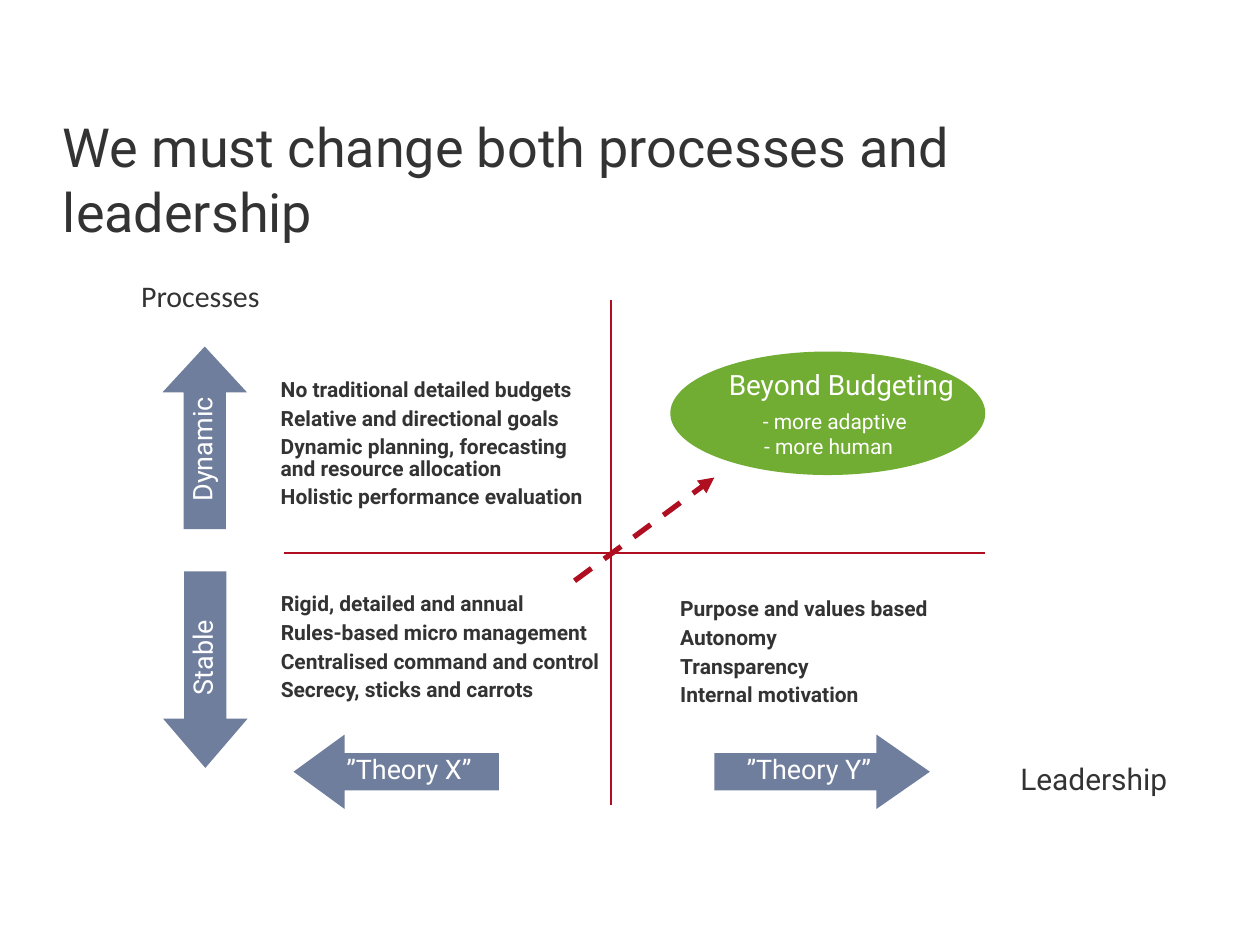
from lxml import etree
from pptx import Presentation
from pptx.dml.color import RGBColor
from pptx.enum.dml import MSO_LINE
from pptx.enum.shapes import MSO_CONNECTOR, MSO_SHAPE
from pptx.enum.text import MSO_ANCHOR, PP_ALIGN
from pptx.oxml.ns import qn
from pptx.util import Inches, Pt

TEXT = "333333"
WHITE = "FFFFFF"
RED = "AF0F20"
BLUE = "707E9E"
GREEN = "71AC33"

DYNAMIC_POINTS = [
    "No traditional detailed budgets",
    "Relative and directional goals",
    "Dynamic planning, forecasting and resource allocation",
    "Holistic performance evaluation",
]
STABLE_POINTS = [
    "Rigid, detailed and annual",
    "Rules-based micro management",
    "Centralised command and control",
    "Secrecy, sticks and carrots",
]
THEORY_Y_POINTS = [
    "Purpose and values based",
    "Autonomy",
    "Transparency",
    "Internal motivation",
]


def color(value):
    return RGBColor.from_string(value)


def set_margins(frame, left, top, right, bottom):
    frame.margin_left, frame.margin_top = Inches(left), Inches(top)
    frame.margin_right, frame.margin_bottom = Inches(right), Inches(bottom)


def add_run(paragraph, text, size, text_color=TEXT, font="Roboto", bold=False):
    run = paragraph.add_run()
    run.text = text
    run.font.size = Pt(size)
    run.font.name = font
    run.font.bold = bold
    run.font.color.rgb = color(text_color)


def add_text_box(slide, left, top, width, height, wrap=True):
    box = slide.shapes.add_textbox(
        Inches(left), Inches(top), Inches(width), Inches(height))
    box.text_frame.word_wrap = wrap
    return box.text_frame


def add_points(slide, left, top, width, height, points):
    frame = add_text_box(slide, left, top, width, height)
    for index, point in enumerate(points):
        paragraph = frame.add_paragraph() if index else frame.paragraphs[0]
        paragraph.line_spacing = Pt(12.2)
        paragraph.space_before = Pt(4.2 if index else 0)
        add_run(paragraph, point, 12, bold=True)


def add_filled_shape(slide, kind, left, top, width, height, fill):
    shape = slide.shapes.add_shape(
        kind, Inches(left), Inches(top), Inches(width), Inches(height))
    shape.shadow.inherit = False
    shape.fill.solid()
    shape.fill.fore_color.rgb = color(fill)
    shape.line.fill.background()
    shape.text_frame.word_wrap = False
    shape.text_frame.vertical_anchor = MSO_ANCHOR.MIDDLE
    return shape


def add_block_arrow(slide, kind, left, top, width, height, head, label, rotation=0):
    arrow = add_filled_shape(slide, kind, left, top, width, height, BLUE)
    arrow.adjustments[0] = 0.5
    arrow.adjustments[1] = head
    arrow.rotation = rotation
    set_margins(arrow.text_frame, 0.1, 0, 0.1, 0.05)
    paragraph = arrow.text_frame.paragraphs[0]
    paragraph.alignment = PP_ALIGN.CENTER
    add_run(paragraph, label, 15.4, WHITE)


def add_line(slide, x1, y1, x2, y2, width=1.5):
    line = slide.shapes.add_connector(
        MSO_CONNECTOR.STRAIGHT, Inches(x1), Inches(y1), Inches(x2), Inches(y2))
    line.line.color.rgb = color(RED)
    line.line.width = Pt(width)
    etree.SubElement(line._element.spPr, qn("a:effectLst"))
    return line


def add_dashed_arrow(slide, x1, y1, x2, y2):
    arrow = add_line(slide, x1, y1, x2, y2, width=3)
    arrow.line.dash_style = MSO_LINE.DASH
    etree.SubElement(arrow.line._get_or_add_ln(), qn("a:tailEnd"), type="triangle")


def add_goal_ellipse(slide):
    ellipse = add_filled_shape(slide, MSO_SHAPE.OVAL, 5.32, 2.79, 2.5, 0.98, GREEN)
    frame = ellipse.text_frame
    lines = [
        ("Beyond Budgeting", 16, 0, 0),
        ("- more adaptive", 12, 0.27, 4),
        ("- more human", 12, 0.28, 0),
    ]
    for index, (text, size, indent, space) in enumerate(lines):
        paragraph = frame.add_paragraph() if index else frame.paragraphs[0]
        paragraph.alignment = PP_ALIGN.LEFT
        paragraph.space_before = Pt(space)
        paragraph._p.get_or_add_pPr().set("marL", str(Inches(indent)))
        add_run(paragraph, text, size, WHITE)


def main():
    presentation = Presentation()
    presentation.slide_width = Inches(10)
    presentation.slide_height = Inches(7.5)
    slide = presentation.slides.add_slide(presentation.slide_layouts[6])

    # Title
    title = add_text_box(slide, 0.5, 0.62, 9, 1.11)
    set_margins(title, 0, 0.28, 0, 0.16)
    add_run(title.paragraphs[0], "We must change both processes and leadership", 30.8)

    # Process arrows, turned to point down and up
    add_block_arrow(slide, MSO_SHAPE.LEFT_ARROW, 0.85, 4.98, 1.56, 0.67,
                    0.584, "Stable", 270)
    add_block_arrow(slide, MSO_SHAPE.RIGHT_ARROW, 0.9, 3.14, 1.45, 0.67,
                    0.542, "Dynamic", 270)

    # Axes and their names
    add_line(slide, 2.25, 4.39, 7.82, 4.39)
    add_line(slide, 4.85, 2.38, 4.85, 6.39)
    leadership = add_text_box(slide, 8, 5.99, 1.39, 0.39, wrap=False)
    add_run(leadership.paragraphs[0], "Leadership", 17.1)
    processes = add_text_box(slide, 0.27, 2.22, 2.64, 0.32).paragraphs[0]
    processes.alignment = PP_ALIGN.CENTER
    processes.line_spacing = Pt(16)
    add_run(processes, "Processes", 17.1, font="Calibri")

    # Goal and the leadership arrows
    add_goal_ellipse(slide)
    add_block_arrow(slide, MSO_SHAPE.LEFT_ARROW, 2.33, 5.83, 1.63, 0.59,
                    0.687, "”Theory X”")
    add_block_arrow(slide, MSO_SHAPE.RIGHT_ARROW, 5.67, 5.83, 1.71, 0.59,
                    0.718, "”Theory Y”")
    add_dashed_arrow(slide, 4.56, 4.61, 5.67, 3.79)

    # Quadrant texts
    add_points(slide, 2.13, 2.97, 2.66, 1.15, DYNAMIC_POINTS)
    add_points(slide, 5.3, 4.71, 2.46, 0.99, THEORY_Y_POINTS)
    add_points(slide, 2.13, 4.67, 2.91, 1.39, STABLE_POINTS)

    presentation.save("out.pptx")


if __name__ == "__main__":
    main()
